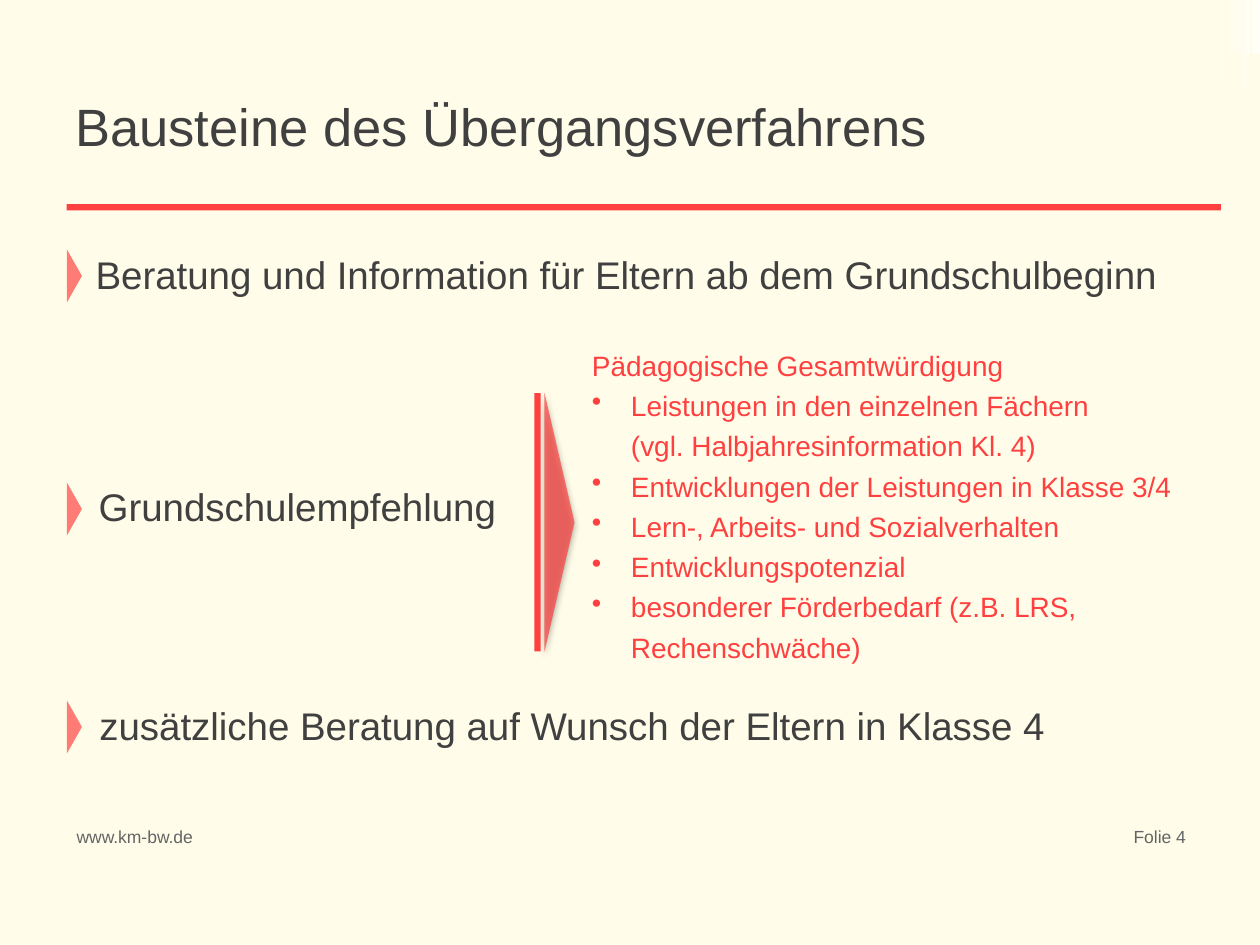
import pptx
import pptx.dml.color
import pptx.enum.shapes
import pptx.enum.text
import pptx.oxml
import pptx.oxml.ns
import pptx.util
from lxml import etree

SHAPE = pptx.enum.shapes.MSO_SHAPE
ALIGN = pptx.enum.text.PP_ALIGN
ANCHOR = pptx.enum.text.MSO_ANCHOR
COLUMNS, ROWS = 100, 75
RED, DARK, GREY, WHITE, CREAM = "FF4040", "404040", "646464", "FFFFFF", "FFFDE9"
INDENT = 0.31


def color(value):
    return pptx.dml.color.RGBColor.from_string(value)


def write(paragraph, text, size=22, ink=DARK, align=ALIGN.LEFT, spacing=None, indent=0, bullet=None):
    properties = paragraph._p.get_or_add_pPr()
    if indent:
        properties.set("marL", str(pptx.util.Inches(indent)))
        properties.set("indent", str(-pptx.util.Inches(indent) if bullet else 0))
    if bullet:
        mark = etree.SubElement(properties, pptx.oxml.ns.qn("a:buChar"))
        mark.set("char", bullet)
    paragraph.alignment = align
    if spacing:
        paragraph.line_spacing = spacing
    run = paragraph.add_run()
    run.text = text
    run.font.name = "Arial"
    run.font.size = pptx.util.Pt(size)
    run.font.color.rgb = color(ink)


class Deck:
    """Holds the style and the current slide, placed on a grid of columns and rows."""

    def __init__(self):
        self.presentation = pptx.Presentation()
        self.presentation.slide_width = pptx.util.Inches(10)
        self.presentation.slide_height = pptx.util.Inches(7.5)
        self.slide = self.presentation.slides.add_slide(self.presentation.slide_layouts[6])
        self.slide.background.fill.solid()
        self.slide.background.fill.fore_color.rgb = color(CREAM)

    def place(self, left, top, width, height):
        column = self.presentation.slide_width / COLUMNS
        row = self.presentation.slide_height / ROWS
        return [round(length) for length in (left * column, top * row, width * column, height * row)]

    def shape(self, kind, box, fill=None, opacity=100):
        shape = self.slide.shapes.add_shape(kind, *self.place(*box))
        shape.shadow.inherit = False
        shape.line.fill.background()
        if fill is None:
            shape.fill.background()
            return shape
        shape.fill.solid()
        shape.fill.fore_color.rgb = color(fill)
        if opacity < 100:
            tint = shape._element.spPr.find(".//" + pptx.oxml.ns.qn("a:srgbClr"))
            etree.SubElement(tint, pptx.oxml.ns.qn("a:alpha")).set("val", str(opacity * 1000))
        return shape

    def bar(self, box, fill=RED, opacity=100):
        return self.shape(SHAPE.RECTANGLE, box, fill, opacity)

    def arrow(self, box, opacity, shadow=False):
        shape = self.shape(SHAPE.PENTAGON, box, RED, opacity)
        shape.adjustments[0] = 0.99
        if shadow:
            effects = shape._element.spPr.find(pptx.oxml.ns.qn("a:effectLst"))
            effects.append(pptx.oxml.parse_xml(
                f'<a:outerShdw {pptx.oxml.ns.nsdecls("a")} blurRad="{pptx.util.Pt(4)}" '
                f'dist="{pptx.util.Pt(2)}" dir="5400000" rotWithShape="0">'
                '<a:srgbClr val="000000"><a:alpha val="45000"/></a:srgbClr></a:outerShdw>'))

    def fill_frame(self, frame, paragraphs, anchor, **style):
        frame.word_wrap = True
        frame.vertical_anchor = anchor
        for index, (text, extra) in enumerate(paragraphs):
            paragraph = frame.add_paragraph() if index else frame.paragraphs[0]
            write(paragraph, text, **style, **extra)

    def text(self, box, paragraphs, anchor=ANCHOR.MIDDLE, **style):
        shape = self.slide.shapes.add_textbox(*self.place(*box))
        self.fill_frame(shape.text_frame, paragraphs, anchor, **style)

    def process(self, box, text):
        shape = self.shape(SHAPE.FLOWCHART_PROCESS, box)
        self.fill_frame(shape.text_frame, [(text, {})], ANCHOR.MIDDLE)


def main():
    deck = Deck()
    strips = [(98.9, 0.3, 4.3, 65), (99.4, 0.6, 4.3, 65), (97, 0.1, 6.4, 30),
              (98.7, 0.1, 6.8, 60), (97.5, 0.6, 4.3, 20), (98.2, 0.3, 4.3, 40)]
    for left, width, height, opacity in strips:
        deck.bar((left, 0, width, height), WHITE, opacity)

    footers = [("www.km-bw.de", 5.1, 13.3, ALIGN.LEFT), ("Folie 4", 85.4, 9.7, ALIGN.RIGHT)]
    for text, left, width, align in footers:
        deck.text((left, 65.1, width, 3.9), [(text, {})], ANCHOR.TOP, size=10, ink=GREY, align=align)
    deck.text((5, 6.1, 90, 7.7), [("Bausteine des Übergangsverfahrens", {})], size=30)

    item = {"indent": INDENT, "bullet": "•"}
    deck.text((46, 26.5, 51.3, 26.8), [
        ("Pädagogische Gesamtwürdigung", {}),
        ("Leistungen in den einzelnen Fächern", item),
        ("(vgl. Halbjahresinformation Kl. 4)", {"indent": INDENT}),
        ("Entwicklungen der Leistungen in Klasse 3/4", item),
        ("Lern-, Arbeits- und Sozialverhalten", item),
        ("Entwicklungspotenzial", item),
        ("besonderer Förderbedarf (z.B. LRS, Rechenschwäche)", item),
    ], size=16, ink=RED, spacing=1.2)

    deck.process((6.9, 54.8, 87.5, 5.5), "zusätzliche Beratung auf Wunsch der Eltern in Klasse 4")
    deck.process((6.6, 17.8, 87.5, 7.9), "Beratung und Information für Eltern ab dem Grundschulbeginn")
    deck.text((6.2, 28.8, 34.8, 22.8), [("Grundschulempfehlung", {})], align=ALIGN.CENTER)

    deck.arrow((43.2, 31.2, 2.4, 20.5), 70, shadow=True)
    deck.bar((42.4, 31.2, 0.5, 20.5))
    for top in (19.8, 38.3, 55.6):
        deck.arrow((5.3, top, 1.2, 4.2), 68)
    deck.bar((5.3, 16.2, 91.6, 0.5))
    deck.presentation.save("out.pptx")


if __name__ == "__main__":
    main()
